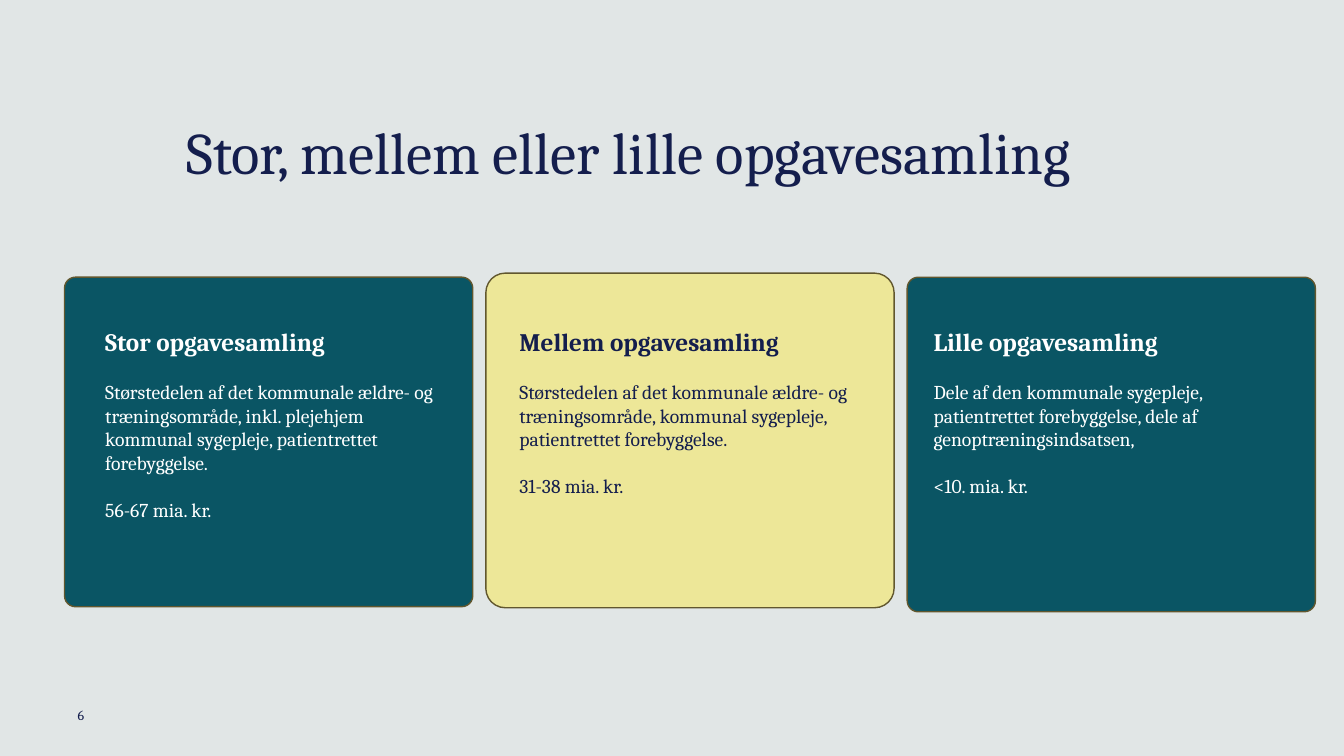
import pptx
import pptx.dml.color
import pptx.enum.shapes
import pptx.enum.text
import pptx.util

Pt = pptx.util.Pt
NAVY, TEAL, YELLOW, OLIVE, WHITE = "141E4D", "0A5564", "EDE798", "61572E", "FFFFFF"


def rgb(value):
    return pptx.dml.color.RGBColor.from_string(value)


def write(frame, paragraphs, color, anchor):
    """Fill a frame without insets from (text, size, bold, space before) tuples."""
    frame.margin_left = frame.margin_right = frame.margin_top = frame.margin_bottom = 0
    frame.word_wrap = True
    frame.vertical_anchor = anchor
    for index, (text, size, bold, gap) in enumerate(paragraphs):
        paragraph = frame.add_paragraph() if index else frame.paragraphs[0]
        paragraph.text = text
        if gap:
            paragraph.space_before = Pt(gap)
        paragraph.font.name = "Cambria"
        paragraph.font.size = Pt(size)
        paragraph.font.bold = bold
        paragraph.font.color.rgb = rgb(color)


presentation = pptx.Presentation()
presentation.slide_width, presentation.slide_height = Pt(960), Pt(540)
slide = presentation.slides.add_slide(presentation.slide_layouts[5])
slide.background.fill.solid()
slide.background.fill.fore_color.rgb = rgb("E1E6E6")

MIDDLE = pptx.enum.text.MSO_ANCHOR.MIDDLE
TOP = pptx.enum.text.MSO_ANCHOR.TOP

title = slide.shapes.title
title.left, title.top, title.width, title.height = Pt(55.4), Pt(71.3), Pt(787), Pt(79.2)
write(title.text_frame, [("Stor, mellem eller lille opgavesamling", 42, False, 0)], NAVY, MIDDLE)
title.text_frame.paragraphs[0].alignment = pptx.enum.text.PP_ALIGN.CENTER
title.text_frame.paragraphs[0].line_spacing = 0.9

page_number = slide.shapes.add_textbox(Pt(55.4), Pt(496), Pt(216), Pt(28.8))
write(page_number.text_frame, [("6", 10, False, 0)], NAVY, MIDDLE)

# Card top, height, corner, fill; text left, width, height, colour; heading, scope, cost
options = [
    (198, 235.4, 0.033, TEAL, 75.2, 247.7, 179.3, WHITE, "Stor opgavesamling",
     "Størstedelen af det kommunale ældre- og træningsområde, inkl. plejehjem "
     "kommunal sygepleje, patientrettet forebyggelse.", "56-67 mia. kr."),
    (195.1, 239, 0.058, YELLOW, 371, 243.4, 184.3, NAVY, "Mellem opgavesamling",
     "Størstedelen af det kommunale ældre- og træningsområde, kommunal sygepleje, "
     "patientrettet forebyggelse.", "31-38 mia. kr."),
    (198, 239, 0.033, TEAL, 666.9, 239.8, 143.3, WHITE, "Lille opgavesamling",
     "Dele af den kommunale sygepleje, patientrettet forebyggelse, dele af "
     "genoptræningsindsatsen,", "<10. mia. kr."),
]
CARD_LEFT, CARD_PITCH, CARD_WIDTH = 46.1, 300.95, 291.6
TEXT_TOP, LINE_GAP = 233.3, 16.6

for column, (top, height, corner, fill, text_left, text_width, text_height,
             color, heading, scope, cost) in enumerate(options):
    card = slide.shapes.add_shape(
        pptx.enum.shapes.MSO_SHAPE.ROUNDED_RECTANGLE,
        Pt(CARD_LEFT + column * CARD_PITCH), Pt(top), Pt(CARD_WIDTH), Pt(height))
    card.adjustments[0] = corner
    card.shadow.inherit = False
    card.fill.solid()
    card.fill.fore_color.rgb = rgb(fill)
    card.line.color.rgb = rgb(OLIVE)
    card.line.width = Pt(1)

    description = slide.shapes.add_textbox(
        Pt(text_left), Pt(TEXT_TOP), Pt(text_width), Pt(text_height))
    write(description.text_frame,
          [(heading, 18, True, 0), (scope, 14, False, LINE_GAP), (cost, 14, False, LINE_GAP)],
          color, TOP)

presentation.save("out.pptx")
